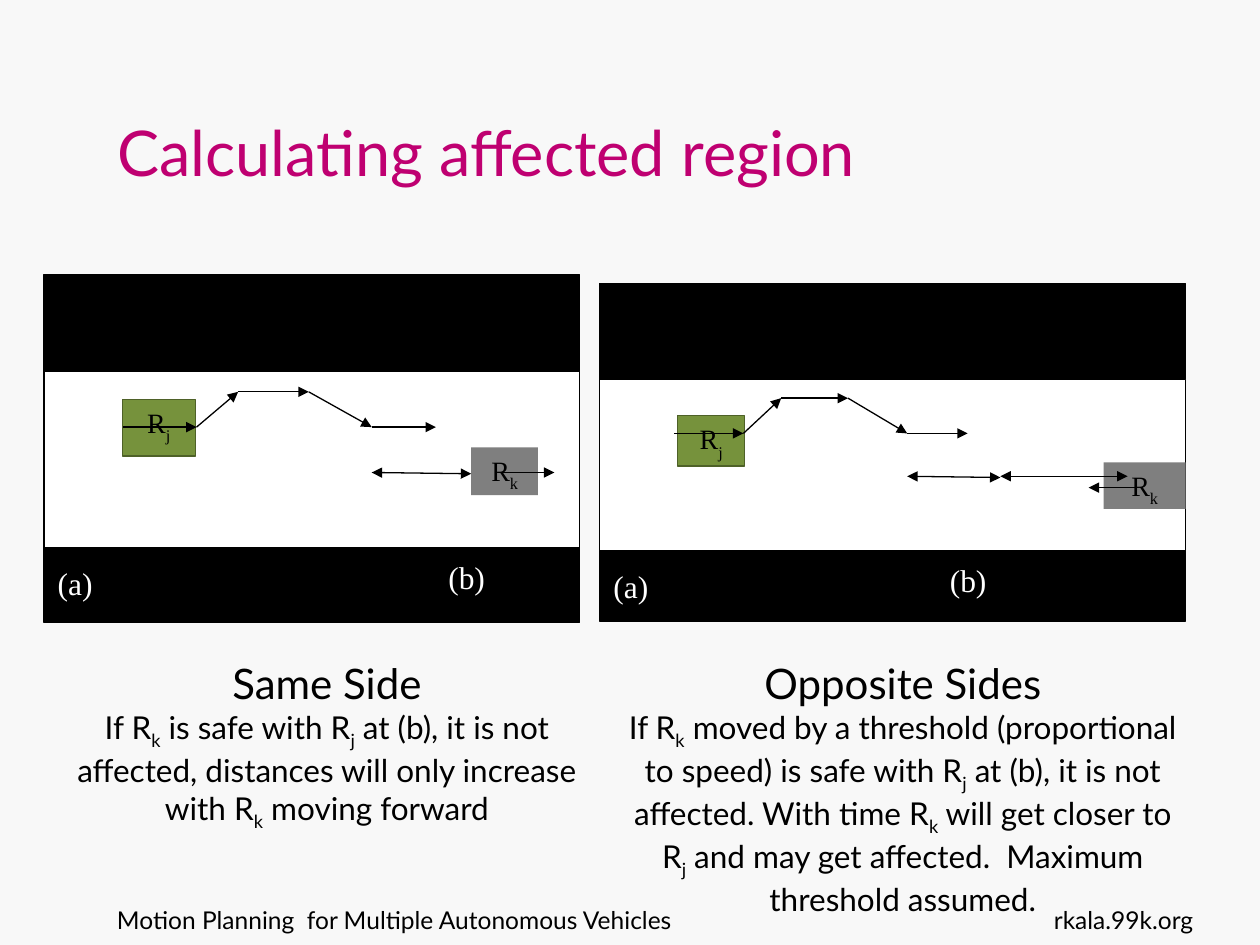
import itertools
import pptx
import pptx.dml.color
import pptx.enum.shapes
import pptx.enum.text
import pptx.oxml
import pptx.oxml.ns
import pptx.util
from pptx.util import Inches

theme = {
    "back": "F8F8F8", "title": "BF0071", "ink": "000000", "road": "FFFFFF",
    "green": "76923C", "edge": "4E6128", "gray": "7F7F7F",
    "sans": "Lato", "serif": "Times New Roman",
    "head": 36, "side": 24, "body": 18, "mark": 18, "car": 16, "foot": 14,
    "line": 0.75,
}
RGB = pptx.dml.color.RGBColor.from_string
ALIGN = pptx.enum.text.PP_ALIGN
RECT = pptx.enum.shapes.MSO_SHAPE.RECTANGLE
LINE = pptx.enum.shapes.MSO_CONNECTOR.STRAIGHT


def write(shape, lines, face="sans", tone="ink", align=ALIGN.LEFT, drop=-25):
    frame = shape.text_frame
    frame.word_wrap = True
    for i, (text, size) in enumerate(lines):
        para = frame.add_paragraph() if i else frame.paragraphs[0]
        para.alignment = align
        for j, part in enumerate(text.split("_")):
            if not part:
                continue
            run = para.add_run()
            run.text = part
            run.font.name = theme[face]
            run.font.size = pptx.util.Pt(theme[size])
            run.font.color.rgb = RGB(theme[tone])
            if j % 2:
                run.font._element.set("baseline", str(drop * 1000))


def arrow(group, start, end, both=False):
    link = group.shapes.add_connector(LINE, *map(Inches, start + end))
    link.line.color.rgb = RGB(theme["ink"])
    link.line.width = pptx.util.Pt(theme["line"])
    tips = ["headEnd", "tailEnd"] if both else ["tailEnd"]
    for tip in tips:
        node = pptx.oxml.parse_xml(f'<a:{tip} {pptx.oxml.ns.nsdecls("a")} type="triangle"/>')
        link.line._get_or_add_ln().append(node)
    link._element.spPr.append(pptx.oxml.parse_xml(f'<a:effectLst {pptx.oxml.ns.nsdecls("a")}/>'))


deck = pptx.Presentation()
deck.slide_width, deck.slide_height = Inches(10), Inches(7.5)
slide = deck.slides.add_slide(deck.slide_layouts[5])
slide.background.fill.solid()
slide.background.fill.fore_color.rgb = RGB(theme["back"])

for at, text, align in [
    ((0.83, 7.13, 6.93, 0.52), "Motion Planning  for Multiple Autonomous Vehicles", ALIGN.LEFT),
    ((8.07, 7.13, 1.5, 0.52), "rkala.99k.org", ALIGN.RIGHT),
]:
    write(slide.shapes.add_textbox(*map(Inches, at)), [(text, "foot")], align=align)

title = slide.shapes.title
title.left, title.top, title.width, title.height = map(Inches, (0.83, 0.3, 6.77, 1.25))
write(title, [("Calculating affected region", "head")], tone="title")
title.text_frame.word_wrap = False
title.text_frame.vertical_anchor = pptx.enum.text.MSO_ANCHOR.BOTTOM

panels = [
    {
        "ground": (4.76, 2.25, 4.65, 2.68), "road": (4.76, 3.01, 4.65, 1.36),
        "rj": (5.38, 3.3, 0.53, 0.4), "rk": (8.76, 3.67, 0.65, 0.37),
        "route": [(5.35, 3.44), (5.9, 3.44), (6.2, 3.16), (6.73, 3.16), (7.2, 3.44), (7.68, 3.44)],
        "marks": [("(a)", (4.77, 4.45, 0.58, 0.46)), ("(b)", (7.44, 4.4, 0.57, 0.5))],
        "gaps": [((7.94, 3.79), (7.2, 3.78), True), ((9.02, 3.87), (8.64, 3.87), False),
                 ((7.94, 3.78), (8.95, 3.78), True)],
        "note": (4.84, 5.17, 4.65, 2.02), "name": "Opposite Sides",
        "text": "If R_k_ moved by a threshold (proportional to speed) is safe with R_j_ at (b), "
                "it is not affected. With time R_k_ will get closer to R_j_ and may get affected.  "
                "Maximum threshold assumed.",
    },
    {
        "ground": (0.35, 2.18, 4.25, 2.76), "road": (0.35, 2.95, 4.25, 1.4),
        "rj": (0.97, 3.17, 0.58, 0.45), "rk": (3.74, 3.55, 0.53, 0.38),
        "route": [(0.98, 3.39), (1.56, 3.39), (1.89, 3.11), (2.45, 3.11), (2.95, 3.39), (3.46, 3.39)],
        "marks": [("(a)", (0.36, 4.43, 0.54, 0.42)), ("(b)", (3.46, 4.38, 0.5, 0.37))],
        "gaps": [((3.74, 3.76), (2.95, 3.75), True), ((3.95, 3.75), (4.4, 3.75), False)],
        "note": (0.51, 5.17, 4.17, 1.41), "name": "Same Side",
        "text": "If R_k_ is safe with R_j_ at (b), it is not affected, distances will only "
                "increase with R_k_ moving forward",
    },
]

for panel in panels:
    group = slide.shapes.add_group_shape()
    for key, fill, edge, label in [
        ("ground", "ink", "ink", ""), ("road", "road", "ink", ""),
        ("rj", "green", "edge", "R_j_"), ("rk", "gray", None, "R_k_"),
    ]:
        box = group.shapes.add_shape(RECT, *map(Inches, panel[key]))
        box.shadow.inherit = False
        box.fill.solid()
        box.fill.fore_color.rgb = RGB(theme[fill])
        if edge:
            box.line.color.rgb = RGB(theme[edge])
            box.line.width = pptx.util.Pt(theme["line"])
        else:
            box.line.fill.background()
        if label:
            write(box, [(label, "car")], "serif", align=ALIGN.CENTER, drop=-30)
            box.text_frame.vertical_anchor = pptx.enum.text.MSO_ANCHOR.TOP
    for start, end in itertools.pairwise(panel["route"]):
        arrow(group, start, end)
    for text, at in panel["marks"]:
        write(group.shapes.add_textbox(*map(Inches, at)), [(text, "mark")], "serif", "road")
    for start, end, both in panel["gaps"]:
        arrow(group, start, end, both)

for panel in reversed(panels):
    note = slide.shapes.add_textbox(*map(Inches, panel["note"]))
    write(note, [(panel["name"], "side"), (panel["text"], "body")], align=ALIGN.CENTER)
    note.text_frame.auto_size = pptx.enum.text.MSO_AUTO_SIZE.SHAPE_TO_FIT_TEXT

deck.save("out.pptx")
